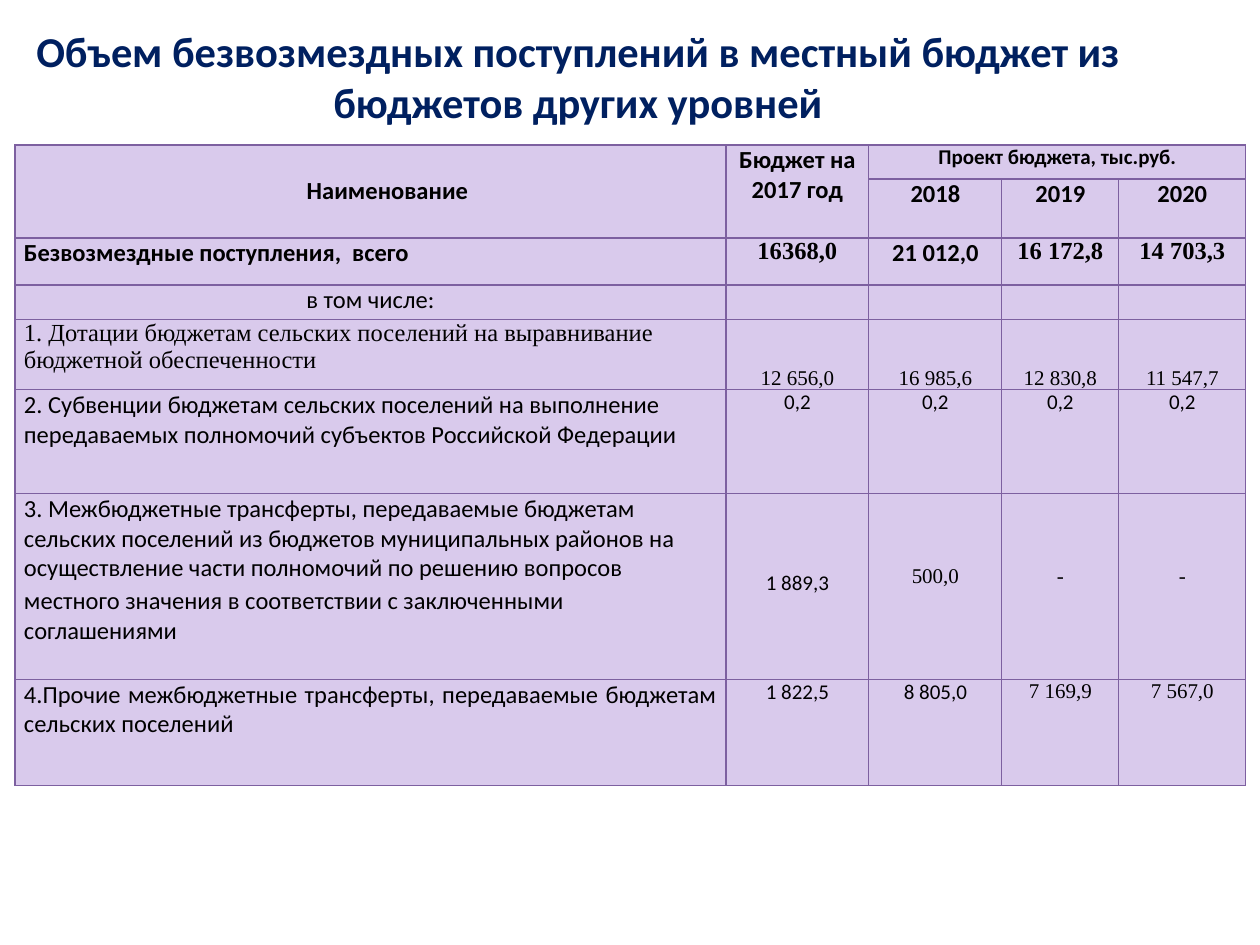
from lxml.etree import SubElement
from pptx import Presentation
from pptx.dml.color import RGBColor
from pptx.enum.text import MSO_ANCHOR, PP_ALIGN
from pptx.oxml.ns import qn
from pptx.util import Emu, Pt

PX = 914400 // 126
SANS, SERIF = "Calibri", "Times New Roman"
NAVY, BLACK, LILAC, PURPLE = "002060", "000000", "D9CAEC", "7D60A0"
LEFT, CENTER, JUSTIFY = PP_ALIGN.LEFT, PP_ALIGN.CENTER, PP_ALIGN.JUSTIFY
TOP, MIDDLE, BOTTOM = MSO_ANCHOR.TOP, MSO_ANCHOR.MIDDLE, MSO_ANCHOR.BOTTOM

COLUMNS = [711, 143, 133, 117, 127]
ROWS = [34, 59, 47, 35, 70, 104, 186, 106]
MERGES = [((0, 0), (1, 0)), ((0, 1), (1, 1)), ((0, 2), (0, 4))]


def px(n):
    return Emu(n * PX)


def color(value):
    return RGBColor.from_string(value)


def write(tf, text, size, font=SANS, bold=False, align=CENTER, fill=BLACK, before=0):
    """Write one paragraph for each line of the text."""
    for i, line in enumerate(text.split("\n")):
        p = tf.paragraphs[0] if i == 0 else tf.add_paragraph()
        p.alignment, p.space_before = align, Pt(before)
        r = p.add_run()
        r.text = line
        for name, value in {"size": Pt(size), "name": font, "bold": bold}.items():
            setattr(r.font, name, value)
        r.font.color.rgb = color(fill)


def add_title(s, text):
    tf = s.shapes.add_textbox(px(11), px(25), px(1134), px(127)).text_frame
    tf.word_wrap = True
    tf.margin_top = 0
    write(tf, text, 24.3, bold=True, fill=NAVY)


def style_cell(cell):
    """Give a cell its borders, fill, margins and a small empty line."""
    tc_pr = cell._tc.get_or_add_tcPr()
    for side in ("lnL", "lnR", "lnT", "lnB"):
        ln = SubElement(tc_pr, qn(f"a:{side}"), w=str(Pt(0.75)))
        SubElement(SubElement(ln, qn("a:solidFill")), qn("a:srgbClr"), val=PURPLE)
    cell.fill.solid()
    cell.fill.fore_color.rgb = color(LILAC)
    for side, margin in {"left": 9, "right": 9, "top": 0, "bottom": 0}.items():
        setattr(cell, f"margin_{side}", px(margin))
    cell.text_frame.paragraphs[0]._p.get_or_add_endParaRPr().set("sz", "1200")


def add_grid(s):
    frame = s.shapes.add_table(len(ROWS), len(COLUMNS), px(15), px(145),
                               px(sum(COLUMNS)), px(sum(ROWS)))
    table = frame.table
    for column, width in zip(table.columns, COLUMNS):
        column.width = px(width)
    for row, height in zip(table.rows, ROWS):
        row.height = px(height)
    for cell in table.iter_cells():
        style_cell(cell)
    for first, last in MERGES:
        table.cell(*first).merge(table.cell(*last))
    return table


def fill_header(table):
    name = table.cell(0, 0)
    name.vertical_anchor = MIDDLE
    name.margin_left = px(43)
    write(name.text_frame, "Наименование", 14, bold=True)
    write(table.cell(0, 1).text_frame, "Бюджет на 2017 год", 14, bold=True)
    write(table.cell(0, 2).text_frame, "Проект бюджета, тыс.руб.", 12, bold=True)
    for col, year in enumerate(("2018", "2019", "2020"), 2):
        write(table.cell(1, col).text_frame, year, 14, bold=True)


def fill_row(table, row, label, values=(), fonts=(), size=12, anchor=TOP, tops=(0,) * 4,
             **label_format):
    write(table.cell(row, 0).text_frame, label, 14, **{"align": LEFT, **label_format})
    bold = label_format.get("bold", False)
    for col, (value, font, top) in enumerate(zip(values, fonts, tops), 1):
        cell = table.cell(row, col)
        cell.vertical_anchor = anchor
        cell.margin_top = px(top)
        write(cell.text_frame, value, size, font, bold)


def main():
    prs = Presentation()
    prs.slide_width, prs.slide_height = px(1260), px(945)
    s = prs.slides.add_slide(prs.slide_layouts[6])
    add_title(s, "Объем безвозмездных поступлений в местный бюджет из бюджетов других уровней")
    table = add_grid(s)
    fill_header(table)
    fill_row(table, 2, "Безвозмездные поступления,  всего",
             ("16368,0", "21 012,0", "16 172,8", "14 703,3"),
             (SERIF, SANS, SERIF, SERIF), size=14, bold=True)
    fill_row(table, 3, "в том числе:", align=CENTER)
    fill_row(table, 4, "1. Дотации бюджетам сельских поселений на выравнивание "
             "бюджетной обеспеченности",
             ("12 656,0", "16 985,6", "12 830,8", "11 547,7"),
             [SERIF] * 4, anchor=BOTTOM, font=SERIF)
    fill_row(table, 5, "2. Субвенции бюджетам сельских поселений на выполнение "
             "передаваемых полномочий субъектов Российской Федерации",
             ["0,2"] * 4, [SANS] * 4)
    fill_row(table, 6, "3. Межбюджетные трансферты, передаваемые бюджетам сельских "
             "поселений из бюджетов муниципальных районов на осуществление части "
             "полномочий по решению вопросов\n"
             "местного значения в соответствии с заключенными соглашениями",
             ("1 889,3", "500,0", "-", "-"), (SANS, SERIF, SERIF, SERIF),
             tops=(77, 71, 71, 71), before=1.6)
    fill_row(table, 7, "4.Прочие межбюджетные трансферты, передаваемые бюджетам "
             "сельских поселений",
             ("1 822,5", "8 805,0", "7 169,9", "7 567,0"),
             (SANS, SANS, SERIF, SERIF), align=JUSTIFY)
    prs.save("out.pptx")


if __name__ == "__main__":
    main()
